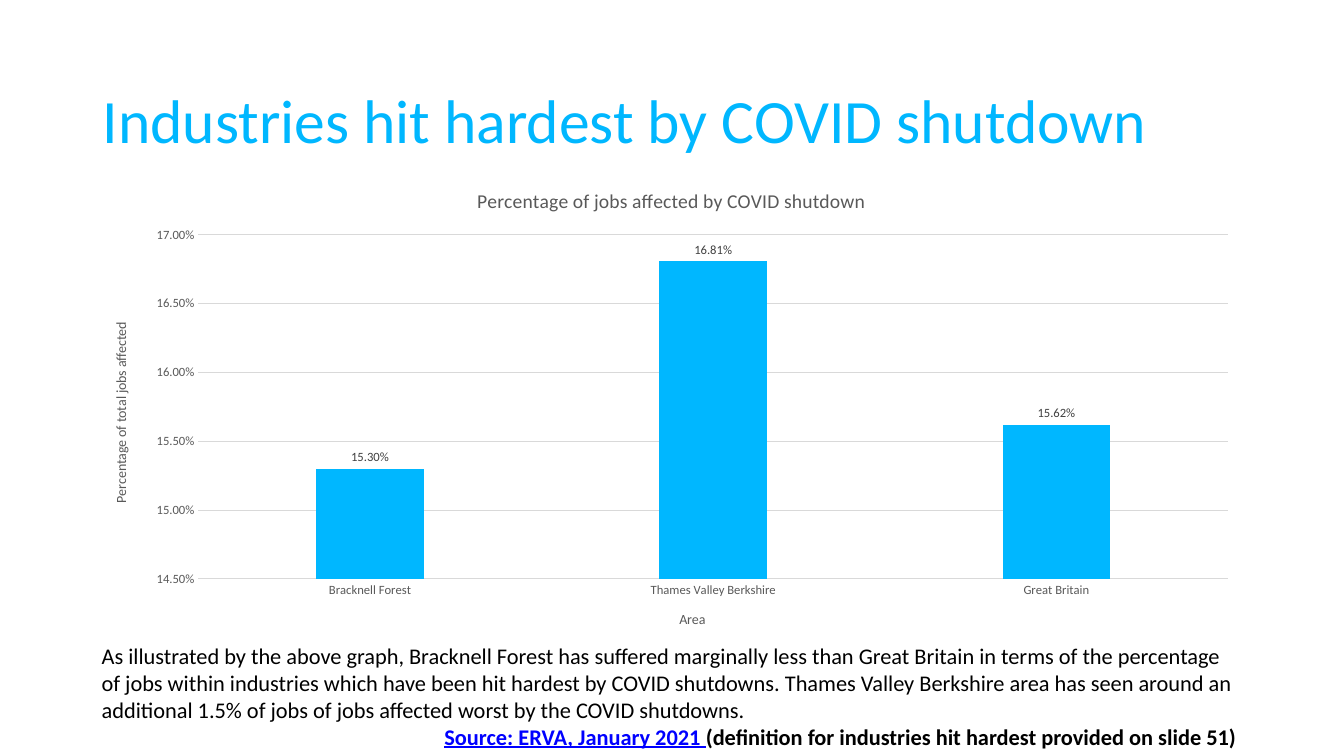
"""Builds the slide on industries hit hardest by the COVID shutdown."""
from lxml import etree
from pptx import Presentation
from pptx.chart.data import CategoryChartData
from pptx.dml.color import RGBColor
from pptx.enum.chart import XL_CHART_TYPE as ChartType
from pptx.enum.chart import XL_LABEL_POSITION as LabelPosition
from pptx.enum.chart import XL_TICK_MARK as TickMark
from pptx.enum.text import MSO_ANCHOR as Anchor
from pptx.oxml.ns import qn
from pptx.util import Inches, Pt

COLORS = {
    "accent": "00B7FF",
    "text": "000000",
    "link": "0000FF",
    "axis": "595959",
    "label": "404040",
    "grid": "D9D9D9",
}
PERCENT = "0.00%"


class SlideBuilder:
    def __init__(self, slide, font_name="Calibri"):
        self.slide = slide
        self.font_name = font_name

    def color(self, name):
        return RGBColor.from_string(COLORS[name])

    def style(self, font, size, color, bold=False):
        font.name = self.font_name
        font.size = Pt(size)
        font.bold = bold
        font.color.rgb = self.color(color)

    def text_box(self, left, top, width, height, anchor=Anchor.TOP):
        box = self.slide.shapes.add_textbox(
            Inches(left), Inches(top), Inches(width), Inches(height))
        frame = box.text_frame
        frame.word_wrap = True
        frame.vertical_anchor = anchor
        return frame

    def paragraph(self, paragraph, text, size, color="text"):
        paragraph.text = text
        self.style(paragraph.font, size, color)

    def source_line(self, paragraph, source, note, size, indent):
        self.style(paragraph.font, size, "text", bold=True)
        paragraph._p.get_or_add_pPr().set("marL", str(Inches(indent)))
        citation = paragraph.add_run()
        citation.text = source
        citation.font.underline = True
        citation.font.color.rgb = self.color("link")
        paragraph.add_run().text = note

    def chart_title(self, owner, text, size):
        frame = (owner.chart_title if hasattr(owner, "chart_title")
                 else owner.axis_title).text_frame
        self.paragraph(frame.paragraphs[0], text, size, "axis")

    def axis(self, axis, title):
        axis.major_tick_mark = axis.minor_tick_mark = TickMark.NONE
        self.style(axis.tick_labels.font, 9, "axis")
        self.chart_title(axis, title, 10)

    def plot_area(self, chart, **fractions):
        area = chart._chartSpace.chart.plotArea
        for old in area.findall(qn("c:layout")):
            area.remove(old)
        layout = etree.Element(qn("c:layout"))
        area.insert(0, layout)
        manual = etree.SubElement(layout, qn("c:manualLayout"))
        settings = {"layoutTarget": "inner", "xMode": "edge", "yMode": "edge", **fractions}
        for tag, value in settings.items():
            etree.SubElement(manual, qn(f"c:{tag}")).set("val", str(value))

    def column_chart(self, left, top, width, height, title, area_title, share_title, shares):
        data = CategoryChartData(number_format=PERCENT)
        data.categories = list(shares)
        data.add_series("Series 1", list(shares.values()))
        chart = self.slide.shapes.add_chart(
            ChartType.COLUMN_CLUSTERED, Inches(left), Inches(top),
            Inches(width), Inches(height), data).chart
        self.style(chart.font, 10, "text")
        chart.has_legend = False
        self.chart_title(chart, title, 14)
        self.plot_area(chart, x=0.092, y=0.139, w=0.888, h=0.717)

        areas, percentages = chart.category_axis, chart.value_axis
        self.axis(areas, area_title)
        self.axis(percentages, share_title)
        areas.format.line.color.rgb = self.color("grid")
        areas.format.line.width = Pt(0.75)
        percentages.format.line.fill.background()
        percentages.minimum_scale, percentages.maximum_scale = 0.145, 0.17
        percentages.major_unit = 0.005
        percentages.tick_labels.number_format = PERCENT
        percentages.tick_labels.number_format_is_linked = False
        gridlines = percentages.major_gridlines.format.line
        gridlines.color.rgb = self.color("grid")
        gridlines.width = Pt(0.75)

        plot = chart.plots[0]
        plot.gap_width, plot.overlap = 219, -27
        plot.vary_by_categories = False
        columns = plot.series[0]
        columns.format.fill.solid()
        columns.format.fill.fore_color.rgb = self.color("accent")
        labels = columns.data_labels
        labels.show_value = True
        labels.position = LabelPosition.OUTSIDE_END
        labels.number_format = PERCENT
        labels.number_format_is_linked = False
        self.style(labels.font, 9, "label")


def main():
    presentation = Presentation()
    presentation.slide_width, presentation.slide_height = Inches(13.33), Inches(7.5)
    builder = SlideBuilder(presentation.slides.add_slide(presentation.slide_layouts[6]))

    heading = builder.text_box(0.92, 0.61, 11.5, 1.24, Anchor.MIDDLE).paragraphs[0]
    builder.paragraph(heading, "Industries hit hardest by COVID shutdown", 44, "accent")
    heading.line_spacing = 0.9

    builder.column_chart(
        0.91, 1.67, 11.5, 4.76,
        "Percentage of jobs affected by COVID shutdown",
        "Area", "Percentage of total jobs affected",
        {"Bracknell Forest": 0.153, "Thames Valley Berkshire": 0.1681, "Great Britain": 0.1562})

    commentary = builder.text_box(0.91, 6.32, 11.5, 1.18)
    builder.paragraph(
        commentary.paragraphs[0],
        "As illustrated by the above graph, Bracknell Forest has suffered marginally less than "
        "Great Britain in terms of the percentage of jobs within industries which have been hit "
        "hardest by COVID shutdowns. Thames Valley Berkshire area has seen around an additional "
        "1.5% of jobs of jobs affected worst by the COVID shutdowns.", 16)
    builder.source_line(
        commentary.add_paragraph(), "Source: ERVA, January 2021 ",
        "(definition for industries hit hardest provided on slide 51)", 16, 3.4)

    presentation.save("out.pptx")


if __name__ == "__main__":
    main()
